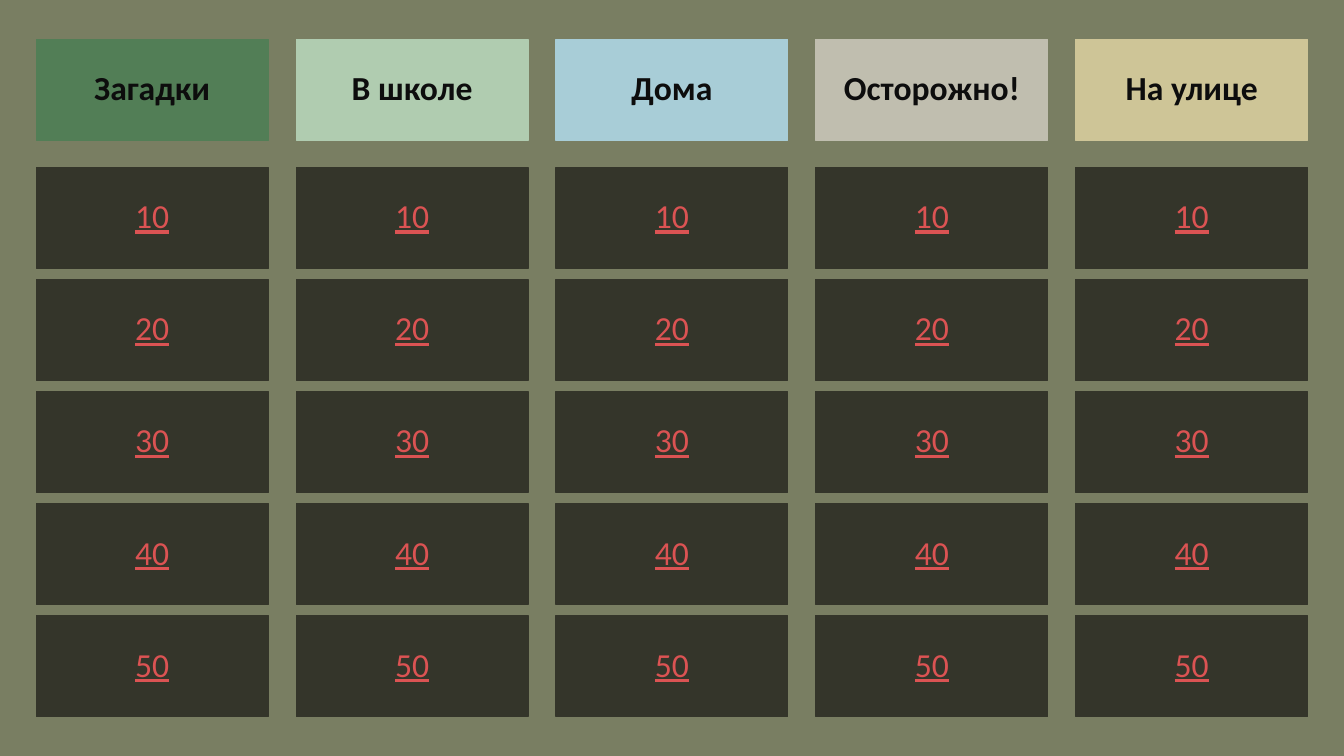
from pptx import Presentation
from pptx.dml.color import RGBColor
from pptx.enum.shapes import MSO_SHAPE
from pptx.enum.text import MSO_ANCHOR, PP_ALIGN
from pptx.util import Inches, Pt

RECT = MSO_SHAPE.RECTANGLE
MIDDLE = MSO_ANCHOR.MIDDLE
CENTER = PP_ALIGN.CENTER

COLORS = {
    "background": "797E62",
    "cell": "34352A",
    "title": "0D0D0D",
    "points": "DB5353",
    "green": "527E56",
    "mint": "B0CCB0",
    "blue": "A8CDD7",
    "grey": "C0BEAF",
    "sand": "CEC597",
}
CATEGORIES = [
    ("Загадки", "green"),
    ("В школе", "mint"),
    ("Дома", "blue"),
    ("Осторожно!", "grey"),
    ("На улице", "sand"),
]
POINTS = range(10, 60, 10)

# Grid in inches: equal columns between the side margins, equal point rows
SLIDE_W, SLIDE_H = 13.33, 7.5
MARGIN = 0.36
CELL_W, CELL_H = 2.3, 1.0
HEADER_TOP = 0.39
FIRST_ROW, LAST_ROW = 1.66, 6.11
COL_STEP = (SLIDE_W - 2 * MARGIN - CELL_W) / (len(CATEGORIES) - 1)
ROW_STEP = (LAST_ROW - FIRST_ROW) / (len(POINTS) - 1)


def rgb(name):
    return RGBColor.from_string(COLORS[name])


def add_cell(slide, col, top, text, fill, color):
    left = MARGIN + col * COL_STEP
    sp = slide.shapes.add_shape(
        RECT, Inches(left), Inches(top), Inches(CELL_W), Inches(CELL_H))
    sp.shadow.inherit = False
    sp.fill.solid()
    sp.fill.fore_color.rgb = rgb(fill)
    sp.line.color.rgb = rgb(fill)
    sp.line.width = Pt(0.75)
    tf = sp.text_frame
    tf.word_wrap = True
    tf.vertical_anchor = MIDDLE
    p = tf.paragraphs[0]
    p.text = text
    p.alignment = CENTER
    p.line_spacing = 0.9
    p.space_before = Pt(10)
    p.font.name = "Calibri"
    p.font.size = Pt(24)
    p.font.color.rgb = rgb(color)
    return p


def add_header(slide, col, title, fill):
    p = add_cell(slide, col, HEADER_TOP, title, fill, "title")
    p.font.bold = True


def add_points(slide, col, row, points):
    top = FIRST_ROW + row * ROW_STEP
    p = add_cell(slide, col, top, str(points), "cell", "points")
    p.font.underline = True


def main():
    prs = Presentation()
    prs.slide_width = Inches(SLIDE_W)
    prs.slide_height = Inches(SLIDE_H)
    slide = prs.slides.add_slide(prs.slide_layouts[6])

    # Background
    slide.background.fill.solid()
    slide.background.fill.fore_color.rgb = rgb("background")

    # Game board: a header and its point cells in each column
    for col, (title, fill) in enumerate(CATEGORIES):
        add_header(slide, col, title, fill)
        for row, points in enumerate(POINTS):
            add_points(slide, col, row, points)

    prs.save("out.pptx")


if __name__ == "__main__":
    main()
